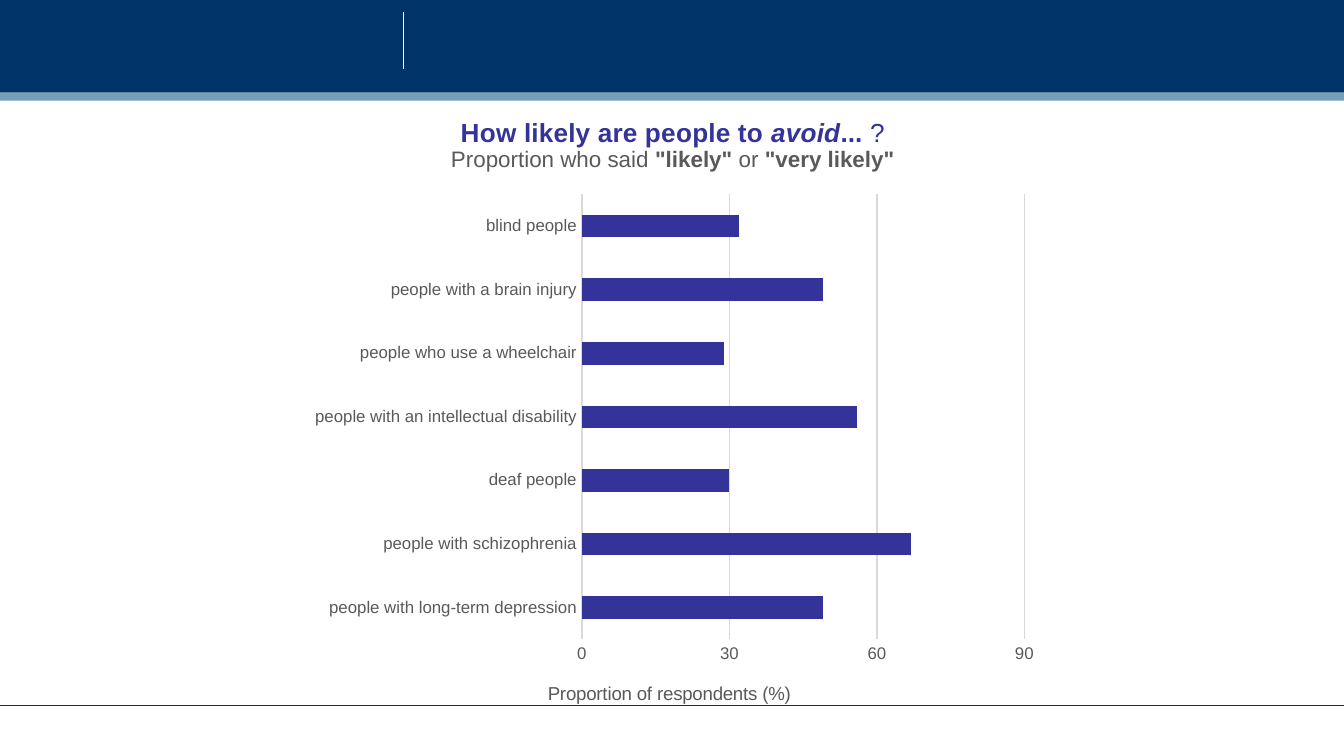
"""Build a slide with a bar chart of how likely people are to avoid others."""
from lxml.etree import SubElement
from pptx import Presentation
from pptx.chart.data import CategoryChartData as ChartData
from pptx.dml.color import RGBColor as RGB
from pptx.enum.chart import XL_CHART_TYPE as Kind, XL_TICK_MARK as Tick
from pptx.enum.shapes import MSO_CONNECTOR as Link, MSO_SHAPE as Shape
from pptx.oxml.ns import qn
from pptx.util import Inches, Pt

HUES = {"navy": "003368", "steel": "759FB8", "white": "FFFFFF",
        "bar": "333399", "text": "595959", "grid": "D9D9D9"}
COLORS = {name: RGB.from_string(code) for name, code in HUES.items()}


def place(node, index, **spots):
    for old in node.findall(qn("c:layout")):
        node.remove(old)
    layout = SubElement(node, qn("c:layout"))
    node.insert(index, layout)
    manual = SubElement(layout, qn("c:manualLayout"))
    if "w" in spots:
        SubElement(manual, qn("c:layoutTarget")).set("val", "inner")
    for mode in ("xMode", "yMode"):
        SubElement(manual, qn(f"c:{mode}")).set("val", "edge")
    for key, value in spots.items():
        SubElement(manual, qn(f"c:{key}")).set("val", str(value))


def write(par, runs):
    for text, size, hue, bold, slant in runs:
        run = par.add_run()
        run.text = text
        style = {"name": "Arial", "size": Pt(size), "bold": bold, "italic": slant}
        for key, value in style.items():
            setattr(run.font, key, value)
        run.font.color.rgb = COLORS[hue]


deck = Presentation()
deck.slide_width, deck.slide_height = Inches(10), Inches(10 * 9 / 16)
slide = deck.slides.add_slide(deck.slide_layouts[6])
shapes = slide.shapes

for top, height, hue in ((0, 0.69, "navy"), (0.69, 0.06, "steel")):
    band = shapes.add_shape(Shape.RECTANGLE, 0, Inches(top), Inches(10), Inches(height))
    band.shadow.inherit = False
    band.fill.solid()
    band.fill.fore_color.rgb = COLORS[hue]
    band.line.fill.background()

for ends, hue in (((3, 0.09, 3, 0.51), "white"), ((0, 5.25, 10, 5.25), "navy")):
    rule = shapes.add_connector(Link.STRAIGHT, *map(Inches, ends))
    rule.line.color.rgb = COLORS[hue]
    rule.line.width = Pt(0.75)
    SubElement(rule.element.spPr, qn("a:effectLst"))

scores = {
    "people with long-term depression": 49,
    "people with schizophrenia": 67,
    "deaf people": 30,
    "people with an intellectual disability": 56,
    "people who use a wheelchair": 29,
    "people with a brain injury": 49,
    "blind people": 32,
}
data = ChartData()
data.categories = list(scores)
data.add_series("Series 1", list(scores.values()))
box = map(Inches, (2.21, 0.69, 5.58, 4.73))
chart = shapes.add_chart(Kind.BAR_CLUSTERED, *box, data).chart
chart.has_legend = False
chart.font.name, chart.font.size = "Arial", Pt(10)

plot = chart.plots[0]
plot.gap_width = 182
plot.vary_by_categories = False
fill = plot.series[0].format.fill
fill.solid()
fill.fore_color.rgb = COLORS["bar"]

cats, vals = chart.category_axis, chart.value_axis
for axis in (cats, vals):
    axis.major_tick_mark = axis.minor_tick_mark = Tick.NONE
    font = axis.tick_labels.font
    font.name, font.size = "Arial", Pt(9)
    font.color.rgb = COLORS["text"]
scale = {"minimum_scale": 0, "maximum_scale": 90, "major_unit": 30,
         "has_major_gridlines": True}
for key, value in scale.items():
    setattr(vals, key, value)
vals.format.line.fill.background()
for line in (cats.format.line, vals.major_gridlines.format.line):
    line.color.rgb = COLORS["grid"]
    line.width = Pt(0.75)

chart.has_title = True
frame = chart.chart_title.text_frame
write(frame.paragraphs[0], (
    ("How likely are people to ", 14, "bar", True, False),
    ("avoid", 14, "bar", True, True),
    ("...", 14, "bar", True, False),
    (" ?", 14, "bar", False, False)))
write(frame.add_paragraph(), (
    ("Proportion who said ", 12, "text", False, False),
    ('"likely"', 12, "text", True, False),
    (" or ", 12, "text", False, False),
    ('"very likely"', 12, "text", True, False)))
label = vals.axis_title
write(label.text_frame.paragraphs[0],
      (("Proportion of respondents (%)", 10, "text", False, False),))

place(chart.chart_title.element, 1, x=0.2, y=0.03)
place(label.element, 1, x=0.33, y=0.92)
area = chart.element.find(".//" + qn("c:plotArea"))
place(area, 0, x=0.38, y=0.16, w=0.59, h=0.7)

deck.save("out.pptx")
